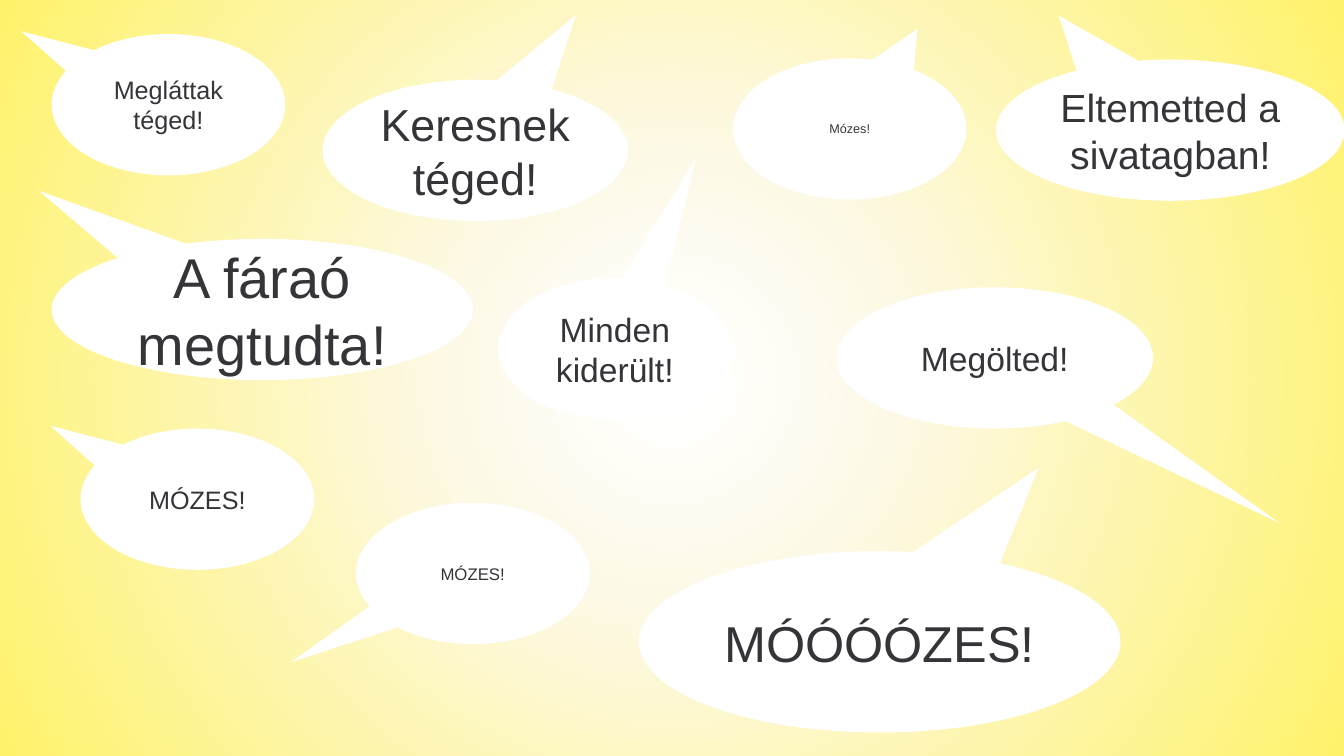
from pptx import Presentation
from pptx.dml.color import RGBColor
from pptx.enum.shapes import MSO_SHAPE as Shape
from pptx.enum.text import MSO_ANCHOR as Anchor, PP_ALIGN as Align
from pptx.oxml import parse_xml
from pptx.oxml.ns import nsdecls, qn
from pptx.util import Cm, Pt

COLORS = {"bubble": "FFFFFF", "ink": "343539", "cream": "FDF9E7", "yellow": "FEF26B"}
GLOW = [(3, "bubble"), (29, "cream"), (100, "yellow")]
FONT = "Arial"
NARROW, LOW, TALL = 5.89, 3.56, 4.57

# text, size, (left, top), (width, height), tail tip relative to the centre
BUBBLES = [
    ("MÓZES!", 18, (2.03, 10.8), (NARROW, LOW), (-0.63, -0.52)),
    ("A fáraó megtudta!", 40, (1.3, 6.02), (10.62, LOW), (-0.53, -0.84)),
    ("Megláttak téged!", 18, (1.3, 0.86), (NARROW, LOW), (-0.63, -0.52)),
    ("MÓZES!", 12, (8.97, 12.67), (NARROW, LOW), (-0.78, 0.63)),
    ("Megölted!", 24, (21.08, 7.24), (7.98, LOW), (0.9, 1.17)),
    ("Minden kiderült!", 24, (12.55, 7.01), (NARROW, LOW), (0.35, -1.36)),
    ("Eltemetted a sivatagban!", 28, (25.1, 1.5), (8.79, LOW), (-0.32, -0.81)),
    ("MÓÓÓÓZES!", 36, (16.1, 13.89), (12.14, TALL), (0.33, -0.96)),
    ("Mózes!", 9, (18.47, 1.47), (NARROW, LOW), (0.29, -0.71)),
    ("Keresnek téged!", 32, (8.13, 2.01), (7.7, LOW), (0.33, -0.96)),
]


def paint_background(slide):
    slide.background.fill.solid()
    properties = slide.element.find(".//" + qn("p:bgPr"))
    stops = "".join(
        f'<a:gs pos="{percent * 1000}"><a:srgbClr val="{COLORS[name]}"/></a:gs>'
        for percent, name in GLOW
    )
    gradient = parse_xml(
        f'<a:gradFill {nsdecls("a")} rotWithShape="1"><a:gsLst>{stops}</a:gsLst>'
        '<a:path path="circle"><a:fillToRect l="50000" t="50000" r="50000" b="50000"/>'
        "</a:path></a:gradFill>"
    )
    properties.replace(properties.find(qn("a:solidFill")), gradient)


def add_bubble(slide, text, size, corner, extent, tail):
    bubble = slide.shapes.add_shape(
        Shape.OVAL_CALLOUT, *(Cm(length) for length in corner + extent)
    )
    for index, offset in enumerate(tail):
        bubble.adjustments[index] = offset
    bubble.shadow.inherit = False
    bubble.fill.solid()
    bubble.fill.fore_color.rgb = RGBColor.from_string(COLORS["bubble"])
    bubble.line.fill.background()
    frame = bubble.text_frame
    frame.word_wrap = True
    frame.vertical_anchor = Anchor.MIDDLE
    para = frame.paragraphs[0]
    para.text = text
    para.alignment = Align.CENTER
    para.font.name = FONT
    para.font.size = Pt(size)
    para.font.color.rgb = RGBColor.from_string(COLORS["ink"])


def main():
    deck = Presentation()
    deck.slide_width, deck.slide_height = Cm(33.87), Cm(19.05)
    slide = deck.slides.add_slide(deck.slide_layouts[6])
    paint_background(slide)
    for bubble in BUBBLES:
        add_bubble(slide, *bubble)
    deck.save("out.pptx")


if __name__ == "__main__":
    main()
